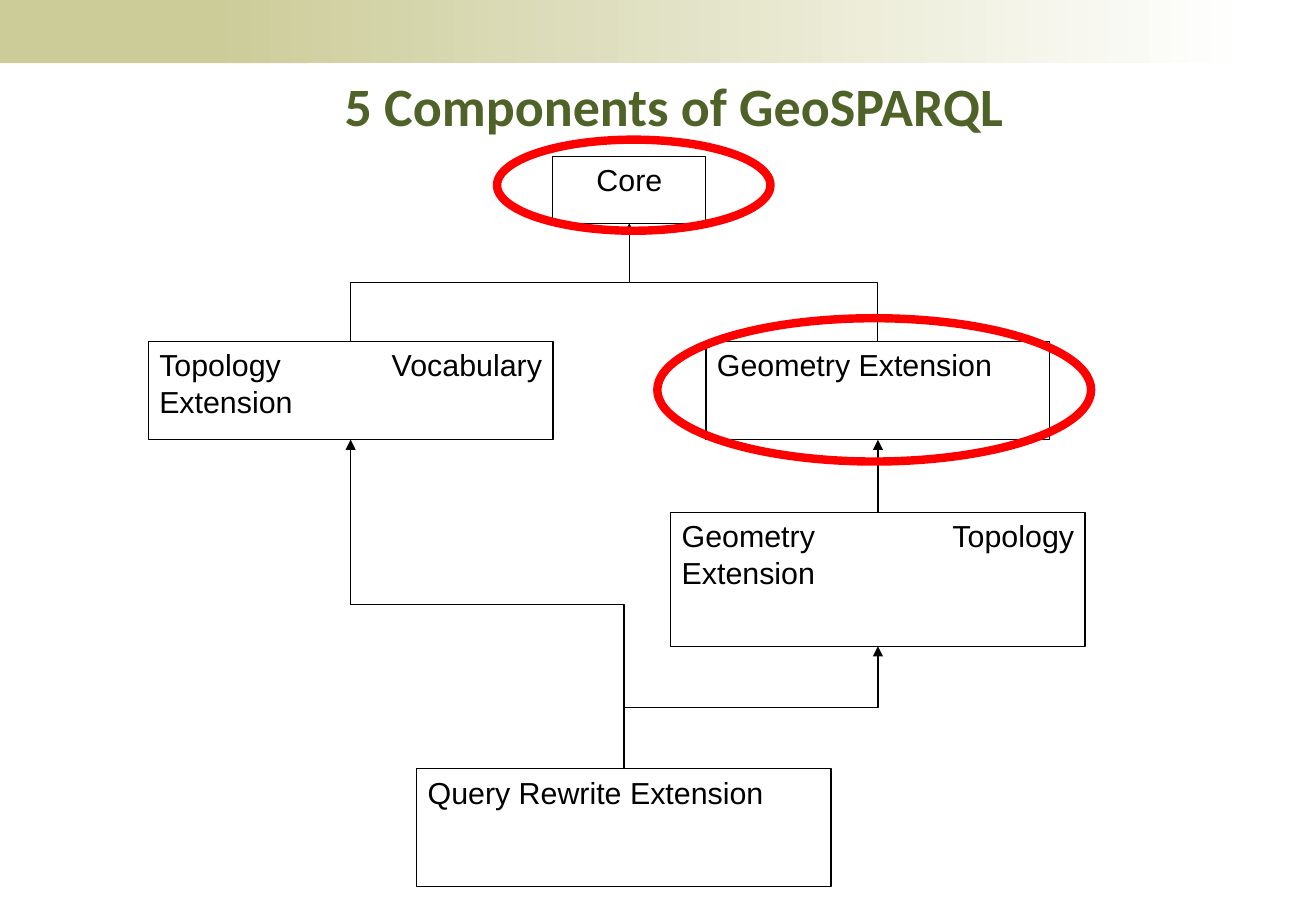
from typing import NamedTuple

from lxml import etree
from pptx import Presentation
from pptx.dml.color import RGBColor
from pptx.enum.shapes import MSO_CONNECTOR, MSO_SHAPE
from pptx.enum.text import MSO_ANCHOR, PP_ALIGN
from pptx.oxml.ns import qn
from pptx.util import Inches, Pt

RECT, OVAL = MSO_SHAPE.RECTANGLE, MSO_SHAPE.OVAL
STRAIGHT, ELBOW = MSO_CONNECTOR.STRAIGHT, MSO_CONNECTOR.ELBOW
CENTER, JUSTIFY = PP_ALIGN.CENTER, PP_ALIGN.JUSTIFY
TOP = MSO_ANCHOR.TOP
TOP_SIDE, BOTTOM_SIDE = 0, 2
SLIDE_W, SLIDE_H = Inches(10.83), Inches(7.5)

BLACK, WHITE, RED = "000000", "FFFFFF", "FF0000"
SAND, OLIVE = "CCCC99", "4F6228"


class Area(NamedTuple):
    """Left, top, width and height in percent of the slide."""
    x: float
    y: float
    w: float
    h: float

    def emu(self) -> tuple[int, int, int, int]:
        return (round(SLIDE_W * self.x / 100), round(SLIDE_H * self.y / 100),
                round(SLIDE_W * self.w / 100), round(SLIDE_H * self.h / 100))


class Component(NamedTuple):
    text: str
    area: Area
    align: PP_ALIGN = JUSTIFY


class Link(NamedTuple):
    source: str
    target: str


TITLE = Area(2.47, 7.33, 97.53, 8.53)
BAND_SOLID = Area(0, 0, 23.36, 6.93)
BAND_FADE = Area(15.88, 0, 79.22, 6.93)

COMPONENTS = {
    "core": Component("Core", Area(42.01, 17.2, 11.63, 7.33), CENTER),
    "vocabulary": Component("Topology Vocabulary Extension",
                            Area(11.27, 37.47, 30.75, 10.8)),
    "geometry": Component("Geometry Extension",
                          Area(53.65, 37.47, 26.13, 10.8)),
    "topology": Component("Geometry Topology Extension",
                          Area(50.97, 56.27, 31.49, 14.67)),
    "rewrite": Component("Query Rewrite Extension",
                         Area(31.67, 84.4, 31.49, 12.93)),
}
LINKS = [
    Link("vocabulary", "core"),
    Link("geometry", "core"),
    Link("topology", "geometry"),
    Link("rewrite", "vocabulary"),
    Link("rewrite", "topology"),
]
HIGHLIGHTS = [Area(37.77, 15.33, 20.78, 10), Area(49.95, 34.93, 32.96, 15.73)]


def color(value: str) -> RGBColor:
    return RGBColor.from_string(value)


def add_shape(s, kind, area: Area, fill: str | None = None,
              line: str | None = None, width: float = 0.75):
    sp = s.shapes.add_shape(kind, *area.emu())
    sp.shadow.inherit = False
    if fill:
        sp.fill.solid()
        sp.fill.fore_color.rgb = color(fill)
    else:
        sp.fill.background()
    if line:
        sp.line.color.rgb = color(line)
        sp.line.width = Pt(width)
    else:
        sp.line.fill.background()
    return sp


def add_text(tf, text: str, size: float, font: str, rgb: str,
             align: PP_ALIGN, bold: bool = False) -> None:
    tf.word_wrap = True
    tf.vertical_anchor = TOP
    p = tf.paragraphs[0]
    p.alignment = align
    r = p.add_run()
    r.text = text
    r.font.size, r.font.name, r.font.bold = Pt(size), font, bold
    r.font.color.rgb = color(rgb)


def add_component(s, component: Component):
    sp = add_shape(s, RECT, component.area, WHITE, BLACK)
    tf = sp.text_frame
    tf.margin_left = tf.margin_right = Inches(0.09)
    tf.margin_top = tf.margin_bottom = Inches(0.04)
    add_text(tf, component.text, 18, "Arial", BLACK, component.align)
    return sp


def add_link(s, source, target) -> None:
    """Arrow from the top of the source up to the bottom of the target."""
    x1, y1 = source.left + source.width // 2, source.top
    x2, y2 = target.left + target.width // 2, target.top + target.height
    straight = abs(x2 - x1) < Inches(0.02)
    cxn = s.shapes.add_connector(STRAIGHT if straight else ELBOW, x1, y1, x2, y2)
    cxn.begin_connect(source, TOP_SIDE)
    cxn.end_connect(target, BOTTOM_SIDE)
    cxn.line.color.rgb = color(BLACK)
    cxn.line.width = Pt(0.75)
    sp_pr = cxn._element.spPr
    ln = sp_pr.find(qn("a:ln"))
    etree.SubElement(ln, qn("a:tailEnd"), type="triangle")
    etree.SubElement(sp_pr, qn("a:effectLst"))
    if straight:
        return
    # A quarter turn makes the elbow leave and arrive vertically
    w, h = abs(y2 - y1), abs(x2 - x1)
    cxn.left, cxn.top = (x1 + x2 - w) // 2, (y1 + y2 - h) // 2
    cxn.width, cxn.height = w, h
    xfrm = sp_pr.find(qn("a:xfrm"))
    xfrm.attrib.pop("flipV", None)
    xfrm.set("flipH", "0" if x2 > x1 else "1")
    xfrm.set("rot", str((270 if x2 > x1 else 90) * 60000))


def main() -> None:
    prs = Presentation()
    prs.slide_width, prs.slide_height = SLIDE_W, SLIDE_H
    s = prs.slides.add_slide(prs.slide_layouts[6])

    # Top band
    add_shape(s, RECT, BAND_SOLID, SAND)
    fade = add_shape(s, RECT, BAND_FADE, SAND).fill
    fade.gradient()
    fade.gradient_angle = 0
    for stop, rgb in zip(fade.gradient_stops, (SAND, WHITE)):
        stop.color.rgb = color(rgb)

    # Title
    tf = s.shapes.add_textbox(*TITLE.emu()).text_frame
    add_text(tf, "5 Components of GeoSPARQL", 32, "Calibri", OLIVE, CENTER, True)

    # Components and their dependencies
    boxes = {name: add_component(s, c) for name, c in COMPONENTS.items()}
    for link in LINKS:
        add_link(s, boxes[link.source], boxes[link.target])

    # Highlights
    for area in HIGHLIGHTS:
        add_shape(s, OVAL, area, line=RED, width=5)

    prs.save("out.pptx")


if __name__ == "__main__":
    main()
